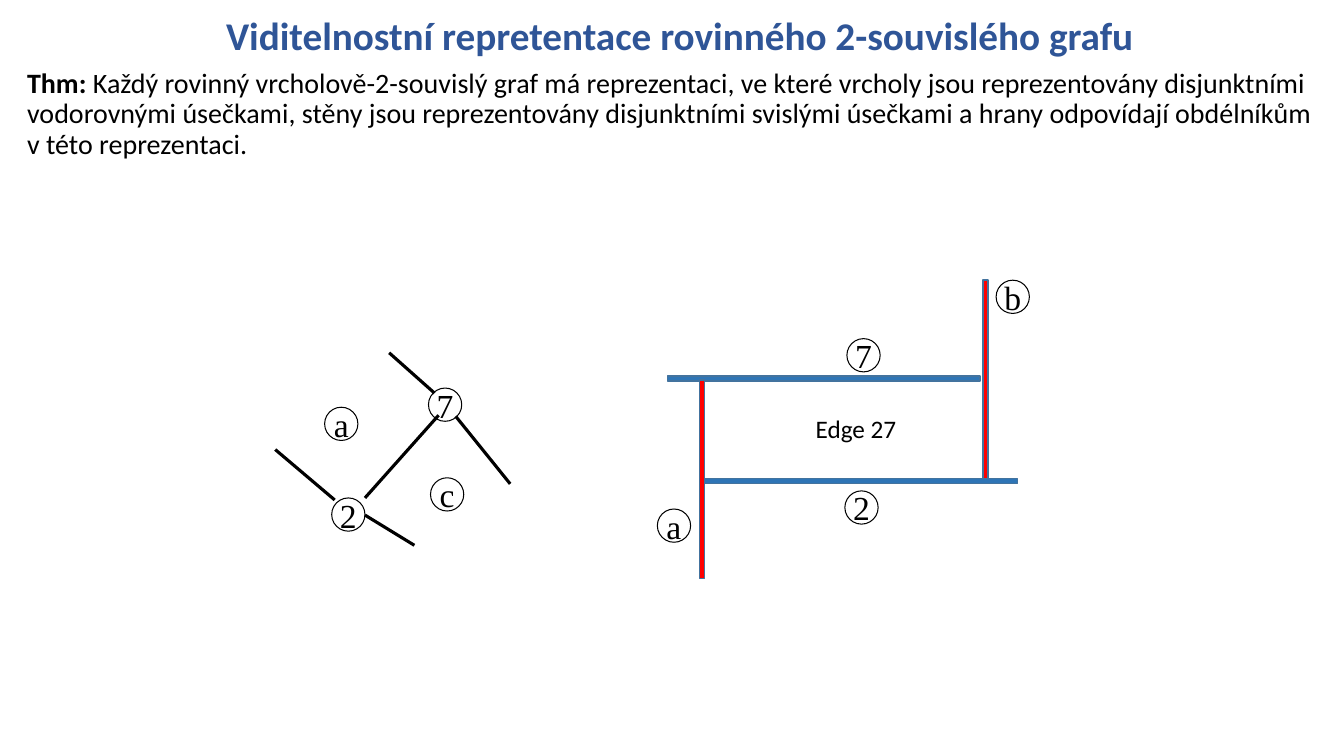
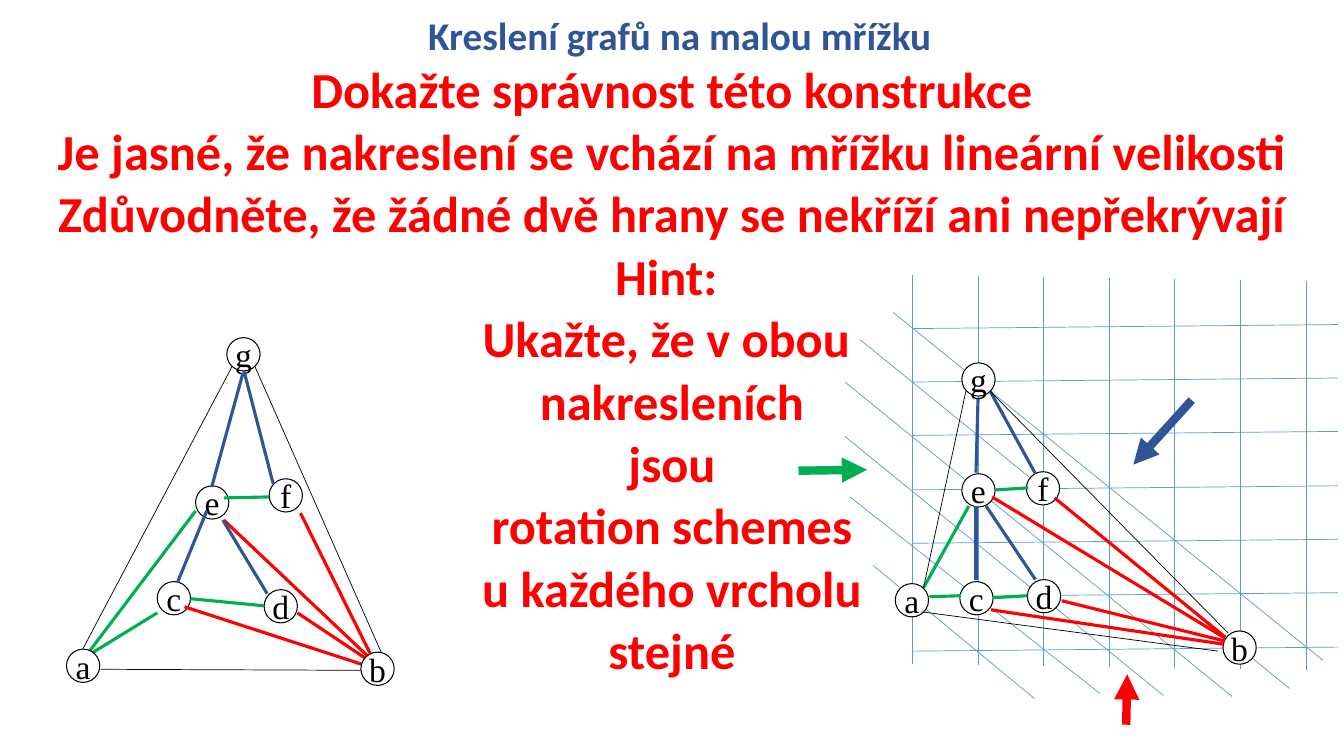
from pptx import Presentation
from pptx.dml.color import RGBColor
from pptx.enum.shapes import MSO_CONNECTOR as Link, MSO_SHAPE as Preset
from pptx.enum.text import MSO_ANCHOR as Anchor, MSO_AUTO_SIZE as AutoSize, PP_ALIGN as Align
from pptx.oxml.ns import qn
from pptx.util import Pt
from lxml.etree import SubElement

SCALE = 9144
COLORS = {
    "black": "000000", "white": "FFFFFF", "navy": "2F5597", "red": "FF0000",
    "green": "00B050", "vertex": "2E75B6", "outline": "43739E", "grid": "5B9BD5",
}
TITLE_ONLY = 5
NODE_SIZE = 33


def px(*lengths):
    return [length * SCALE for length in lengths]


def color(name):
    return RGBColor.from_string(COLORS[name])


class Deck:
    body_font = "Calibri"
    node_font = "Times New Roman"

    def __init__(self):
        self.prs = Presentation()
        self.prs.slide_width, self.prs.slide_height = px(1333, 750)

    def new_slide(self, heading):
        self.slide = self.prs.slides.add_slide(self.prs.slide_layouts[TITLE_ONLY])
        title = self.slide.shapes.title
        title.left, title.top, title.width, title.height = px(174, 3, 1000, 61)
        frame = title.text_frame
        frame.auto_size = AutoSize.NONE
        frame.word_wrap = True
        frame.vertical_anchor = Anchor.BOTTOM
        paragraph = frame.paragraphs[0]
        paragraph.alignment = Align.CENTER
        paragraph.line_spacing = 0.9
        self.run(paragraph, heading, 28, "navy", bold=True)

    def run(self, paragraph, text, size, ink, bold=False, font=body_font):
        run = paragraph.add_run()
        run.text = text
        run.font.name = font
        run.font.size = Pt(size)
        run.font.bold = bold
        run.font.color.rgb = color(ink)

    def body(self, paragraphs, size, ink, align, spacing):
        frame = self.slide.shapes.add_textbox(*px(17, 64, 1299, 672)).text_frame
        frame.word_wrap = True
        for index, runs in enumerate(paragraphs):
            paragraph = frame.add_paragraph() if index else frame.paragraphs[0]
            paragraph.alignment = align
            paragraph.line_spacing = spacing
            paragraph.space_before = Pt(10 if index else 0)
            for text, bold in runs:
                self.run(paragraph, text, size, ink, bold)

    def shape(self, preset, box, fill, outline, width):
        shape = self.slide.shapes.add_shape(preset, *px(*box))
        shape.shadow.inherit = False
        shape.fill.solid()
        shape.fill.fore_color.rgb = color(fill)
        shape.line.color.rgb = color(outline)
        shape.line.width = Pt(width)
        return shape

    def label(self, shape, text, size, font, wrap):
        frame = shape.text_frame
        frame.word_wrap = wrap
        frame.vertical_anchor = Anchor.MIDDLE
        frame.paragraphs[0].alignment = Align.CENTER
        self.run(frame.paragraphs[0], text, size, "black", font=font)

    def nodes(self, *nodes):
        for name, left, top in nodes:
            circle = self.shape(Preset.OVAL, (left, top, NODE_SIZE, NODE_SIZE), "white", "black", 0.75)
            self.label(circle, name, 24, self.node_font, wrap=False)

    def bar(self, box, fill):
        self.shape(Preset.RECTANGLE, box, fill, "outline", 1)

    def caption(self, box, text):
        plate = self.shape(Preset.RECTANGLE, box, "white", "white", 1)
        self.label(plate, text, 18, self.body_font, wrap=True)

    def lines(self, ink, width, *ends, arrow=False):
        for end in ends:
            link = self.slide.shapes.add_connector(Link.STRAIGHT, *px(*end))
            link.line.color.rgb = color(ink)
            link.line.width = Pt(width)
            properties = link._element.spPr
            if arrow:
                SubElement(properties.find(qn("a:ln")), qn("a:tailEnd"), type="triangle")
            SubElement(properties, qn("a:effectLst"))


def visibility_slide(deck):
    deck.new_slide("Viditelnostní repretentace rovinného 2-souvislého grafu")
    theorem = (
        "Každý rovinný vrcholově-2-souvislý graf má reprezentaci, ve které vrcholy jsou "
        "reprezentovány disjunktními vodorovnými úsečkami, stěny jsou reprezentovány "
        "disjunktními svislými úsečkami a hrany odpovídají obdélníkům v této reprezentaci."
    )
    deck.body([[("Thm: ", True), (theorem, False)]], 20, "black", Align.LEFT, 0.9)
    deck.nodes(
        ("2", 329, 494), ("c", 427, 474), ("7", 425, 385), ("a", 322, 404),
        ("2", 838, 487), ("7", 840, 336), ("a", 652, 505), ("b", 988, 278),
    )
    deck.lines(
        "black", 2.25,
        (273, 446, 332, 496), (452, 413, 506, 480), (435, 412, 362, 494),
        (362, 511, 411, 541), (386, 350, 431, 390),
    )
    for left, top in ((662, 373), (699, 475)):
        deck.bar((left, top, 310, 5), "vertex")
    for left, top in ((694, 377), (975, 278)):
        deck.bar((left, top, 5, 197), "red")
    deck.caption((770, 404, 158, 43), "Edge 27")


def planar_drawing(deck):
    deck.nodes(("c", 156, 577), ("e", 194, 482), ("f", 267, 475), ("d", 262, 585), ("g", 225, 335))
    deck.lines(
        "green", 2.25,
        (156, 608, 91, 648), (189, 594, 262, 601), (222, 494, 267, 493), (194, 507, 85, 651),
    )
    deck.lines(
        "red", 2.25,
        (295, 608, 364, 654), (367, 648, 298, 509), (183, 602, 362, 660), (222, 516, 367, 653),
    )
    deck.lines(
        "navy", 2.25,
        (205, 507, 176, 578), (221, 516, 265, 589), (210, 483, 241, 370), (271, 480, 242, 368),
    )
    deck.lines("black", 0.5, (81, 646, 230, 364), (378, 647, 253, 364), (100, 664, 358, 665))
    deck.nodes(("a", 66, 644), ("b", 358, 647))


def grid_drawing(deck):
    for step in range(7):
        row = 326 + step * 160 // 3
        column = 905 + step * 391 // 6
        deck.lines(
            "grid", 0.5,
            (905, row, 1327, row - 4), (column, 273 + step, column, 659 + step),
        )
    deck.lines(
        "grid", 0.5,
        (886, 310, 1312, 655), (853, 337, 1279, 683), (838, 379, 1222, 691),
        (838, 433, 1154, 690), (843, 493, 1091, 688), (866, 561, 1026, 693),
    )
    deck.lines("green", 6, (792, 467, 860, 466), arrow=True)
    deck.lines("red", 6, (1117, 719, 1118, 669), arrow=True)
    deck.lines("navy", 6, (1182, 397, 1124, 461), arrow=True)
    deck.nodes(
        ("g", 954, 360), ("f", 1018, 468), ("e", 954, 470), ("d", 1019, 575),
        ("c", 952, 577), ("b", 1213, 626), ("a", 888, 579),
    )
    deck.lines(
        "green", 2.25,
        (988, 486, 1020, 484), (961, 502, 916, 583), (953, 591, 922, 592), (985, 593, 1019, 591),
    )
    deck.lines(
        "navy", 2.25,
        (968, 469, 970, 396), (1027, 470, 982, 388), (968, 502, 968, 575), (978, 502, 1027, 575),
    )
    deck.lines(
        "red", 2.25,
        (983, 605, 1213, 639), (1053, 596, 1215, 636),
        (984, 493, 1215, 633), (1215, 632, 1046, 494),
    )
    deck.lines("black", 0.5, (916, 583, 958, 388), (1218, 628, 982, 388), (914, 607, 1208, 646))


def small_grid_slide(deck):
    deck.new_slide("Kreslení grafů na malou mřížku")
    task = (
        "Dokažte správnost této konstrukce",
        "Je jasné, že nakreslení se vchází na mřížku lineární velikosti",
        "Zdůvodněte, že žádné dvě hrany se nekříží ani nepřekrývají",
        "Hint: ",
        "Ukažte, že v obou ",
        "nakresleních",
        "jsou",
        "rotation schemes",
        "u každého vrcholu",
        "stejné",
    )
    deck.body([[(sentence, True)] for sentence in task], 36, "red", Align.CENTER, 0.8)
    planar_drawing(deck)
    grid_drawing(deck)


def main():
    deck = Deck()
    visibility_slide(deck)
    small_grid_slide(deck)
    deck.prs.save("out.pptx")


if __name__ == "__main__":
    main()
